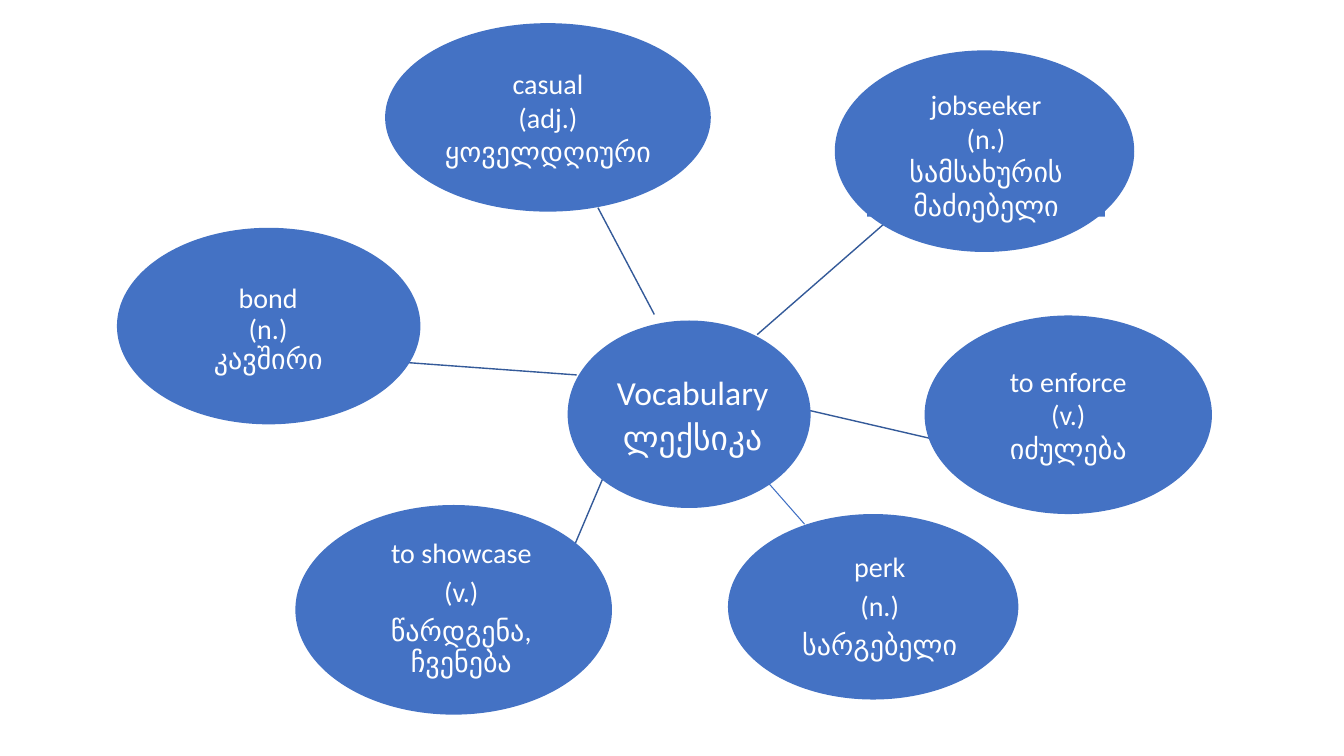
from lxml import etree
from pptx import Presentation, util as u
from pptx.dml.color import RGBColor
from pptx.enum import shapes, text
from pptx.oxml.ns import qn

BLUE, WHITE, EDGE = "4472C4", "FFFFFF", "345A99"
CELL = u.Inches(0.1)  # one column or row of the slide grid

# Word, bubble, label box (None: text sits in the bubble),
# label fill, line spacing, space between lines
WORDS = [
    (["casual", "(adj.)", "ყოველდღიური"],
     (38.2, 2.3, 32.3, 18.7), None, None, 1, 0),
    (["jobseeker", "(n.)", "სამსახურის მაძიებელი"],
     (82.8, 5, 29.7, 20), (86, 9.2, 23.6, 12.3), BLUE, 1, 0),
    (["to showcase", "(v.)", "წარდგენა, ჩვენება"],
     (29.3, 50.1, 31.4, 20.8), (34.3, 54.7, 22.9, 11.4), None, 0.9, 6.3),
    (["bond", "(n.)", "კავშირი"],
     (11.6, 22.6, 30.1, 19.5), (12.8, 28, 27.6, 9.5), None, 0.9, 0),
    (["perk", "(n.)", "სარგებელი"],
     (72.2, 51, 28.8, 18.4), (76.9, 55.5, 20.7, 9.5), BLUE, 0.9, 6.3),
    (["to enforce", "(v.)", "იძულება"],
     (91.7, 31.3, 28.5, 19.7), None, None, 1, 0),
]

# Spokes: start column and row, end column and row, colour, width
SPOKES = [
    (59.3, 20.6, 64.9, 31.2, EDGE, 1),
    (75.1, 33.2, 87.7, 22.2, EDGE, 1),
    (60.2, 46.5, 56.3, 55.7, EDGE, 1),
    (57.2, 37.2, 35.3, 35.6, EDGE, 1),
    (92.3, 43.5, 76.3, 39.8, EDGE, 1),
    (74, 45.4, 79.8, 52, "3F6FC3", 0.75),
]


def color(code):
    return RGBColor.from_string(code)


def cells(*nums):
    return [round(n * CELL) for n in nums]


def spoke(slide, x1, y1, x2, y2, code, width):
    line = slide.shapes.add_connector(
        shapes.MSO_CONNECTOR.STRAIGHT, *cells(x1, y1, x2, y2))
    line.line.color.rgb = color(code)
    line.line.width = u.Pt(width)
    props = line._element.spPr
    etree.SubElement(props, qn("a:effectLst"))


def solid(slide, kind, box):
    shape = slide.shapes.add_shape(kind, *cells(*box))
    shape.shadow.inherit = False
    shape.fill.solid()
    shape.fill.fore_color.rgb = color(BLUE)
    shape.line.fill.background()
    return shape


def write(shape, lines, size, pitch, gap, inset):
    frame = shape.text_frame
    frame.word_wrap = True
    frame.vertical_anchor = text.MSO_ANCHOR.MIDDLE
    frame.margin_left = frame.margin_right = u.Inches(inset)
    frame.margin_top = frame.margin_bottom = u.Inches(min(inset, 0.05))
    frame.text = "\n".join(lines)
    for i, para in enumerate(frame.paragraphs):
        para.alignment = text.PP_ALIGN.CENTER
        para.line_spacing = pitch
        para.space_before = u.Pt(gap if i else 0)
        for run in para.runs:
            run.font.name = "Calibri"
            run.font.size = u.Pt(size)
            run.font.color.rgb = color(WHITE)


def bubble(slide, lines, oval, label, fill, pitch, gap, size=20):
    shape = solid(slide, shapes.MSO_SHAPE.OVAL, oval)
    if label and fill:
        shape = solid(slide, shapes.MSO_SHAPE.RECTANGLE, label)
    elif label:
        shape = slide.shapes.add_textbox(*cells(*label))
    write(shape, lines, size, pitch, gap, 0.01 if label else 0.1)


def main():
    deck = Presentation()
    deck.slide_width, deck.slide_height = u.Inches(13.33), u.Inches(7.5)
    slide = deck.slides.add_slide(deck.slide_layouts[6])

    # Spokes lie behind the bubbles
    for item in SPOKES:
        spoke(slide, *item)

    # Words around the hub
    for word in WORDS:
        bubble(slide, *word)

    # Hub
    bubble(slide, ["Vocabulary", "ლექსიკა"], (56.3, 31.8, 24.1, 18.6),
           (60.7, 35.2, 16, 12.3), BLUE, 0.9, 6, size=24)

    deck.save("out.pptx")


if __name__ == "__main__":
    main()
